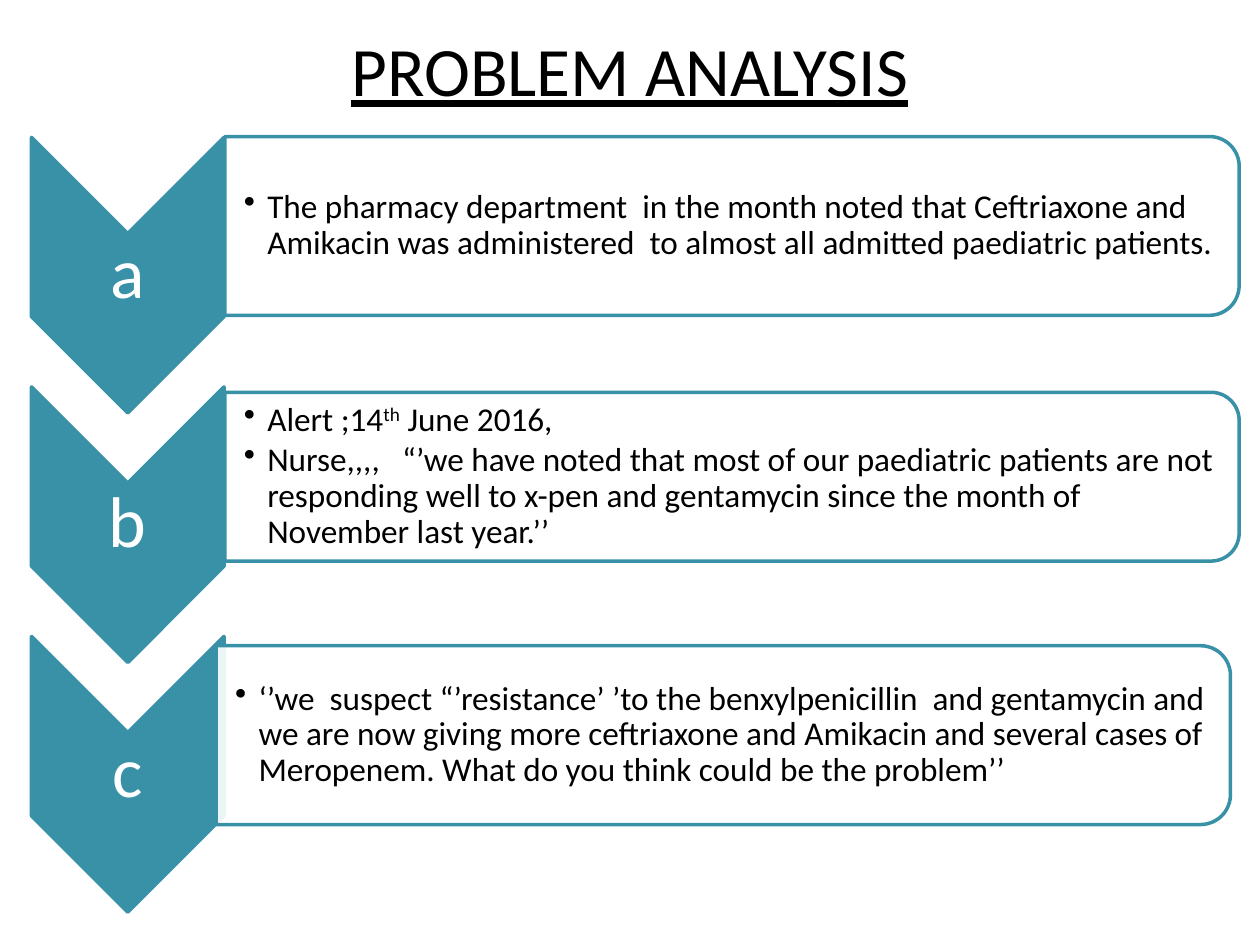
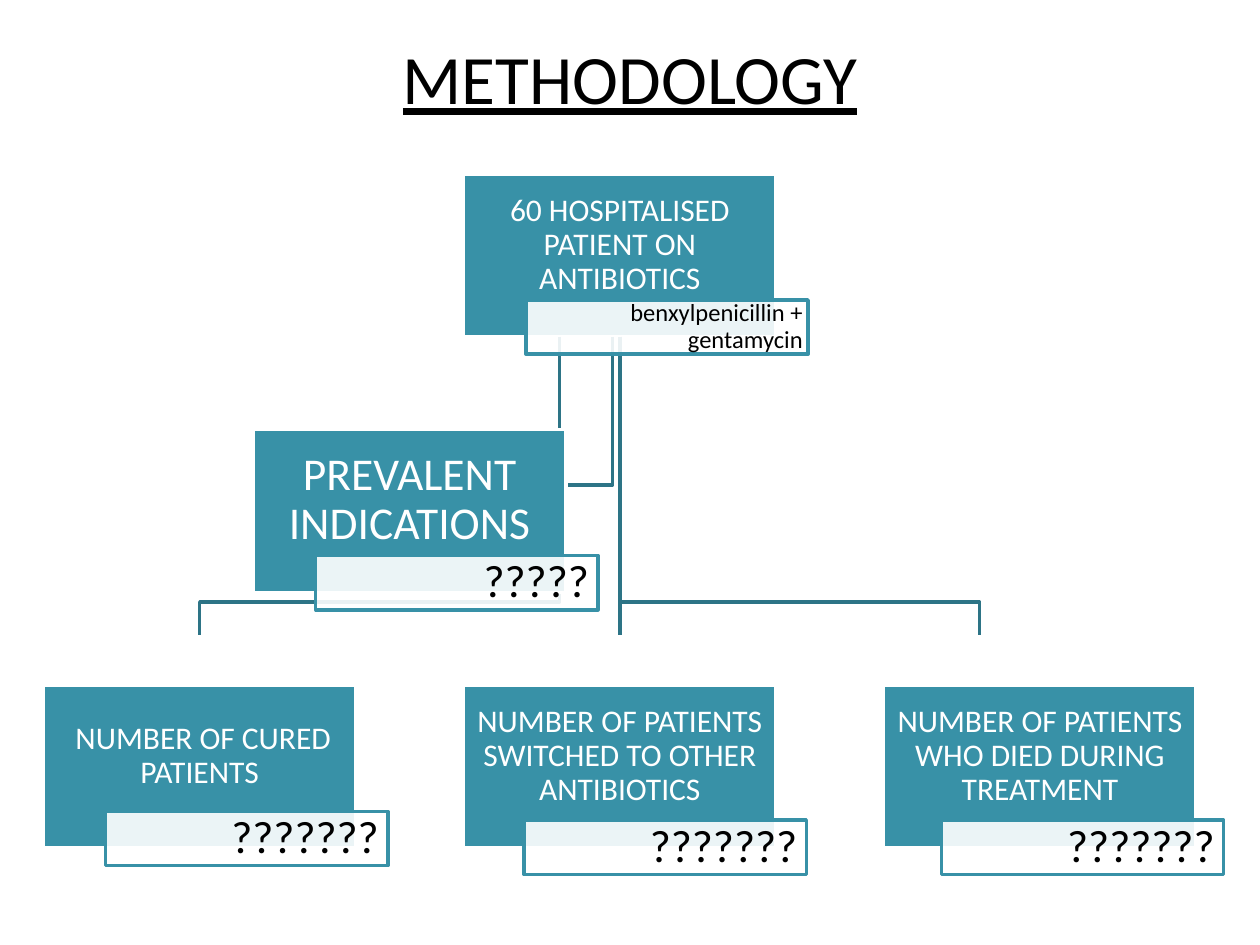
from dataclasses import dataclass

from lxml.etree import SubElement
from pptx import Presentation
from pptx.dml.color import RGBColor
from pptx.enum.shapes import MSO_CONNECTOR, MSO_SHAPE
from pptx.enum.text import MSO_ANCHOR, PP_ALIGN
from pptx.oxml.ns import qn
from pptx.shapes.autoshape import Shape
from pptx.slide import Slide
from pptx.text.text import TextFrame
from pptx.util import Pt

FONT = "Calibri"
TEAL = RGBColor(0x38, 0x91, 0xA7)
DARK_TEAL = RGBColor(0x2D, 0x74, 0x86)
WHITE = RGBColor(0xFF, 0xFF, 0xFF)
BLACK = RGBColor(0x00, 0x00, 0x00)
LINE_WIDTH = 2

CHEVRON_LEFT, CHEVRON_TOP, CHEVRON_WIDTH, CHEVRON_HEIGHT = 18, 78.5, 110, 157.5
CHEVRON_PITCH = 142.6
PANEL_WIDTH = 579.6

BOX_WIDTH, BOX_HEIGHT = 178.6, 93
NOTE_WIDTH, NOTE_HEIGHT = 161.3, 31
COLUMN_LEFT, COLUMN_PITCH = 24.8, 240.1
ROOT_TOP, INDICATION_TOP, OUTCOME_TOP = 99.4, 245.5, 391.7
INDICATION_LEFT = 144.8


@dataclass(frozen=True)
class TextRun:
    """A piece of text, raised when it is a superscript."""

    text: str
    superscript: bool = False


@dataclass(frozen=True)
class Step:
    """A lettered chevron with its panel of bullets."""

    letter: str
    panel_left: float
    panel_top: float
    panel_height: float
    bullets: tuple[tuple[TextRun, ...], ...]


@dataclass(frozen=True)
class Node:
    """A box of the chart with the note that overlaps its corner."""

    label: str
    left: float
    top: float
    note: str
    note_shift: tuple[float, float] = (35.6, 72)
    label_size: float = 18
    note_size: float = 26
    note_inset: float = 5


STEPS = (
    Step("a", 128.5, 78, 102.2, (
        (TextRun("The pharmacy department  in the month noted that Ceftriaxone and "
                 "Amikacin was administered  to almost all admitted paediatric patients."),),
    )),
    Step("b", 128.5, 224.2, 96.5, (
        (TextRun("Alert ;14"), TextRun("th", True), TextRun(" June 2016,")),
        (TextRun("Nurse,,,,   “’we have noted that most of our paediatric patients are not "
                 "responding well to x-pen and gentamycin since the month of "
                 "November last year.’’"),),
    )),
    Step("c", 123.5, 369, 102.2, (
        (TextRun("‘’we  suspect “’resistance’ ’to the benxylpenicillin  and gentamycin and "
                 "we are now giving more ceftriaxone and Amikacin and several cases of "
                 "Meropenem. What do you think could be the problem’’"),),
    )),
)

ROOT = Node("60 HOSPITALISED PATIENT ON ANTIBIOTICS", COLUMN_LEFT + COLUMN_PITCH, ROOT_TOP,
            "benxylpenicillin + gentamycin", note_size=14, note_inset=3)
OUTCOMES = tuple(
    Node(label, COLUMN_LEFT + column * COLUMN_PITCH, OUTCOME_TOP, "???????", note_shift)
    for column, (label, note_shift) in enumerate((
        (" NUMBER OF CURED PATIENTS", (35.6, 72)),
        ("NUMBER OF PATIENTS SWITCHED TO OTHER ANTIBIOTICS", (34.6, 77)),
        ("NUMBER OF PATIENTS WHO DIED DURING TREATMENT", (33, 77)),
    ))
)
INDICATIONS = Node("PREVALENT INDICATIONS", INDICATION_LEFT, INDICATION_TOP, "?????",
                   label_size=26)

TRUNK = ROOT.left + BOX_WIDTH / 2
TRUNK_TOP = ROOT_TOP + BOX_HEIGHT
BRANCH_TOP, BRANCH_BOTTOM = 344.2, 363
BRANCHES = (
    ((350, TRUNK_TOP), (350, 277.2), (INDICATION_LEFT + BOX_WIDTH, 277.2)),
    ((TRUNK, TRUNK_TOP), (TRUNK, BRANCH_TOP),
     (TRUNK + COLUMN_PITCH - 34.6, BRANCH_TOP), (TRUNK + COLUMN_PITCH - 34.6, BRANCH_BOTTOM)),
    ((319.7, TRUNK_TOP), (319.7, BRANCH_TOP),
     (TRUNK - COLUMN_PITCH, BRANCH_TOP), (TRUNK - COLUMN_PITCH, BRANCH_BOTTOM)),
)


def set_frame(frame: TextFrame, left: float, top: float, right: float, bottom: float) -> None:
    """Wrap the text, centre it vertically and set its insets."""
    frame.word_wrap = True
    frame.vertical_anchor = MSO_ANCHOR.MIDDLE
    frame.margin_left, frame.margin_top = Pt(left), Pt(top)
    frame.margin_right, frame.margin_bottom = Pt(right), Pt(bottom)


def write_paragraph(frame: TextFrame, index: int, runs: tuple[TextRun, ...], size: float,
                    color: RGBColor, alignment: PP_ALIGN, underline: bool = False,
                    bullet: bool = False) -> None:
    """Write one paragraph run by run."""
    paragraph = frame.add_paragraph() if index else frame.paragraphs[0]
    paragraph.alignment = alignment
    paragraph.line_spacing = 0.9
    for text_run in runs:
        run = paragraph.add_run()
        run.text = text_run.text
        run.font.name, run.font.size = FONT, Pt(size)
        run.font.color.rgb = color
        if underline:
            run.font.underline = True
        if text_run.superscript:
            run.font.size = Pt(size)
            run._r.get_or_add_rPr().set("baseline", "30000")
    if bullet:
        paragraph.space_before = Pt(2.5 if index else 0)
        properties = paragraph._p.get_or_add_pPr()
        properties.set("marL", str(Pt(13.5)))
        properties.set("indent", str(-Pt(13.5)))
        SubElement(properties, qn("a:buChar")).set("char", "•")


def add_text(slide: Slide, left: float, top: float, width: float, height: float) -> TextFrame:
    """Add an empty text box and return its frame."""
    box = slide.shapes.add_textbox(Pt(left), Pt(top), Pt(width), Pt(height))
    return box.text_frame


def add_title(slide: Slide, text: str, middle: float) -> None:
    """Add the underlined title centred on a height."""
    frame = add_text(slide, 36, middle - 27, 648, 54)
    set_frame(frame, 7.2, 3.6, 7.2, 3.6)
    write_paragraph(frame, 0, (TextRun(text),), 39.6, BLACK, PP_ALIGN.CENTER, underline=True)
    frame.paragraphs[0].line_spacing = 1.0


def style_shape(shape: Shape, fill: RGBColor, line: RGBColor, opacity: int = 100) -> None:
    """Give a shape its fill, outline and opacity in percent."""
    shape.shadow.inherit = False
    shape.fill.solid()
    shape.fill.fore_color.rgb = fill
    shape.line.color.rgb = line
    shape.line.width = Pt(LINE_WIDTH)
    if opacity < 100:
        color = shape._element.spPr.find(qn("a:solidFill"))[0]
        SubElement(color, qn("a:alpha")).set("val", str(opacity * 1000))


def add_turned(slide: Slide, kind: MSO_SHAPE, left: float, top: float,
               width: float, height: float) -> Shape:
    """Add a shape turned by 90 degrees that fills the given area."""
    shift = (width - height) / 2
    shape = slide.shapes.add_shape(kind, Pt(left + shift), Pt(top - shift),
                                   Pt(height), Pt(width))
    shape.rotation = 90
    return shape


def add_step(slide: Slide, step: Step, index: int) -> None:
    """Draw a chevron with its letter, then the panel with its bullets."""
    top = CHEVRON_TOP + index * CHEVRON_PITCH
    chevron = add_turned(slide, MSO_SHAPE.CHEVRON, CHEVRON_LEFT, top,
                         CHEVRON_WIDTH, CHEVRON_HEIGHT)
    style_shape(chevron, TEAL, TEAL)
    letter = add_text(slide, CHEVRON_LEFT, top + CHEVRON_WIDTH / 2, CHEVRON_WIDTH, 47.5)
    set_frame(letter, 2, 2, 2, 2)
    write_paragraph(letter, 0, (TextRun(step.letter),), 41, WHITE, PP_ALIGN.CENTER)

    area = (step.panel_left, step.panel_top, PANEL_WIDTH, step.panel_height)
    panel = add_turned(slide, MSO_SHAPE.ROUND_2_SAME_RECTANGLE, *area)
    style_shape(panel, WHITE, TEAL, opacity=90)
    frame = add_text(slide, *area)
    set_frame(frame, 10.8, 1, 5.8, 1)
    for number, runs in enumerate(step.bullets):
        write_paragraph(frame, number, runs, 19, BLACK, PP_ALIGN.LEFT, bullet=True)


def add_box(slide: Slide, node: Node) -> Shape:
    """Draw the labelled box of a node."""
    box = slide.shapes.add_shape(MSO_SHAPE.RECTANGLE, Pt(node.left), Pt(node.top),
                                 Pt(BOX_WIDTH), Pt(BOX_HEIGHT))
    style_shape(box, TEAL, WHITE)
    set_frame(box.text_frame, 1, 1, 1, 13)
    write_paragraph(box.text_frame, 0, (TextRun(node.label),), node.label_size, WHITE,
                    PP_ALIGN.CENTER)
    return box


def add_note(slide: Slide, node: Node) -> None:
    """Draw the note over the lower right corner of a node."""
    across, down = node.note_shift
    note = slide.shapes.add_shape(MSO_SHAPE.RECTANGLE, Pt(node.left + across),
                                  Pt(node.top + down), Pt(NOTE_WIDTH), Pt(NOTE_HEIGHT))
    style_shape(note, WHITE, TEAL, opacity=90)
    set_frame(note.text_frame, node.note_inset, 1, node.note_inset, 1)
    write_paragraph(note.text_frame, 0, (TextRun(node.note),), node.note_size, BLACK,
                    PP_ALIGN.RIGHT)


def add_branch(slide: Slide, points: tuple[tuple[float, float], ...]) -> None:
    """Draw an open line with bends through the points."""
    start, *others = [(Pt(x), Pt(y)) for x, y in points]
    builder = slide.shapes.build_freeform(*start)
    builder.add_line_segments(others, close=False)
    branch = builder.convert_to_shape()
    branch.shadow.inherit = False
    branch.fill.background()
    branch.line.color.rgb = DARK_TEAL
    branch.line.width = Pt(LINE_WIDTH)


def add_trunk(slide: Slide, root: Shape) -> None:
    """Draw the straight line down from the root box."""
    trunk = slide.shapes.add_connector(MSO_CONNECTOR.STRAIGHT, Pt(TRUNK), Pt(TRUNK_TOP),
                                       Pt(TRUNK), Pt(BRANCH_BOTTOM))
    trunk.begin_connect(root, 2)
    trunk.line.color.rgb = DARK_TEAL
    trunk.line.width = Pt(LINE_WIDTH)
    SubElement(trunk._element.spPr, qn("a:effectLst"))


def build_problem_analysis(slide: Slide) -> None:
    """Build the slide with the three lettered steps."""
    add_title(slide, "PROBLEM ANALYSIS", 39.2)
    for index, step in enumerate(STEPS):
        add_step(slide, step, index)


def build_methodology(slide: Slide) -> None:
    """Build the slide with the patient chart."""
    add_title(slide, "METHODOLOGY", 44)
    root = add_box(slide, ROOT)
    for points in BRANCHES:
        add_branch(slide, points)
    add_trunk(slide, root)
    add_note(slide, ROOT)
    for node in (*OUTCOMES, INDICATIONS):
        add_box(slide, node)
        add_note(slide, node)


def main() -> None:
    """Build and save the presentation."""
    presentation = Presentation()
    presentation.slide_width, presentation.slide_height = Pt(720), Pt(540)
    for build in (build_problem_analysis, build_methodology):
        build(presentation.slides.add_slide(presentation.slide_layouts[6]))
    presentation.save("out.pptx")


if __name__ == "__main__":
    main()
